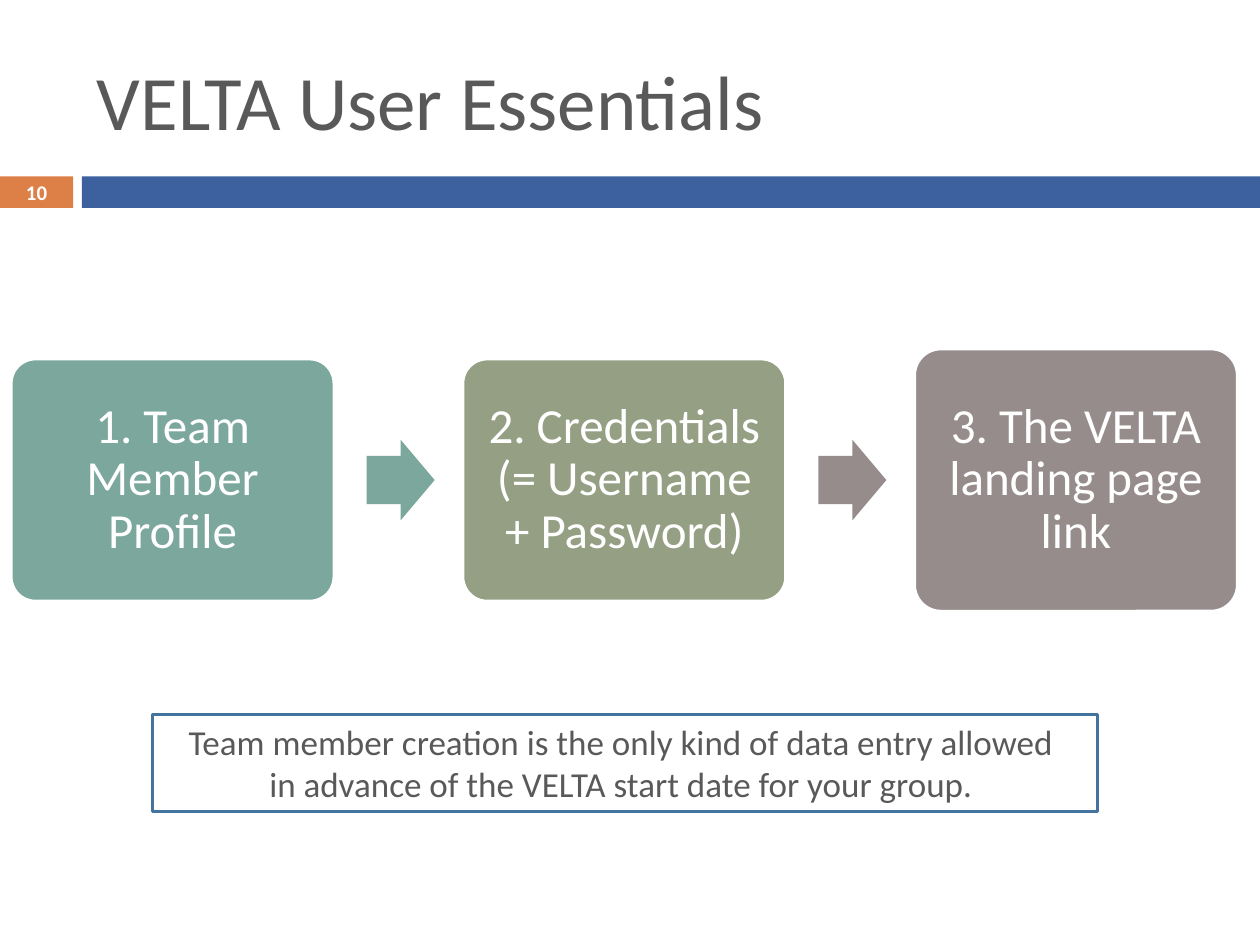
from pptx import Presentation
from pptx.dml.color import RGBColor
from pptx.enum.shapes import MSO_SHAPE
from pptx.enum.text import MSO_ANCHOR, PP_ALIGN
from pptx.util import Inches, Pt

deck = Presentation()
deck.slide_width, deck.slide_height = Inches(10), Inches(7.5)
slide = deck.slides.add_slide(deck.slide_layouts[6])
cell = deck.slide_width / 100  # grid of 100 columns by 75 rows


def add(kind, col, row, wide, high, fill=None, line=None):
    box = [round(n * cell) for n in (col, row, wide, high)]
    shape = slide.shapes.add_shape(kind, *box)
    shape.shadow.inherit = False
    for part, tone in ((shape.fill, fill), (shape.line.fill, line)):
        if tone:
            part.solid()
            part.fore_color.rgb = RGBColor.from_string(tone)
        else:
            part.background()
    if line:
        shape.line.width = Pt(1.5)
    return shape


def write(shape, text, size, tone, align=PP_ALIGN.CENTER, bold=False):
    frame = shape.text_frame
    frame.text = text
    frame.word_wrap = True
    frame.vertical_anchor = MSO_ANCHOR.MIDDLE
    for para in frame.paragraphs:
        para.alignment = align
        for run in para.runs:
            font = run.font
            font.name, font.size, font.bold = "Calibri", Pt(size), bold
            font.color.rgb = RGBColor.from_string(tone)
    return frame


white, gray = "FFFFFF", "595959"

# Title
title = slide.shapes.add_textbox(*[round(n * cell) for n in (6.7, 2.5, 89.2, 10.8)])
write(title, "VELTA User Essentials", 44, gray, PP_ALIGN.LEFT)

# Band with the page number
page = add(MSO_SHAPE.RECTANGLE, 0, 14, 5.8, 2.5, "DD8047")
write(page, "10", 11.9, white, bold=True)
add(MSO_SHAPE.RECTANGLE, 6.5, 14, 93.5, 2.5, "3C619E")

# Three steps, centred on one row, with arrows between
left, pitch, mid = 0.9, 35.85, 38.1
steps = [
    ("1. Team Member Profile", 19.2, "7BA79D", "7BA79D"),
    ("2. Credentials (= Username + Password)", 19.2, "949F83", "968C8C"),
    ("3. The VELTA landing page link", 20.8, "968C8C", None),
]
for i, (text, high, fill, next_fill) in enumerate(steps):
    col = left + i * pitch
    card = add(MSO_SHAPE.ROUNDED_RECTANGLE, col, mid - high / 2, 25.6, high, fill, white)
    card.adjustments[0] = 0.1
    frame = write(card, text, 28, white)
    frame.margin_left = frame.margin_right = Inches(0.12)
    frame.margin_top = frame.margin_bottom = Inches(0.12)
    frame.paragraphs[0].line_spacing = 0.9
    if next_fill:
        arrow = add(MSO_SHAPE.RIGHT_ARROW, col + 28.2, mid - 3.2, 5.4, 6.4, next_fill)
        arrow.adjustments[0], arrow.adjustments[1] = 0.6, 0.5

# Note
note = add(MSO_SHAPE.RECTANGLE, 12.1, 56.7, 75, 7.7, line="43739E")
write(note, "Team member creation is the only kind of data entry allowed \n"
      "in advance of the VELTA start date for your group. ", 20, gray)

deck.save("out.pptx")
